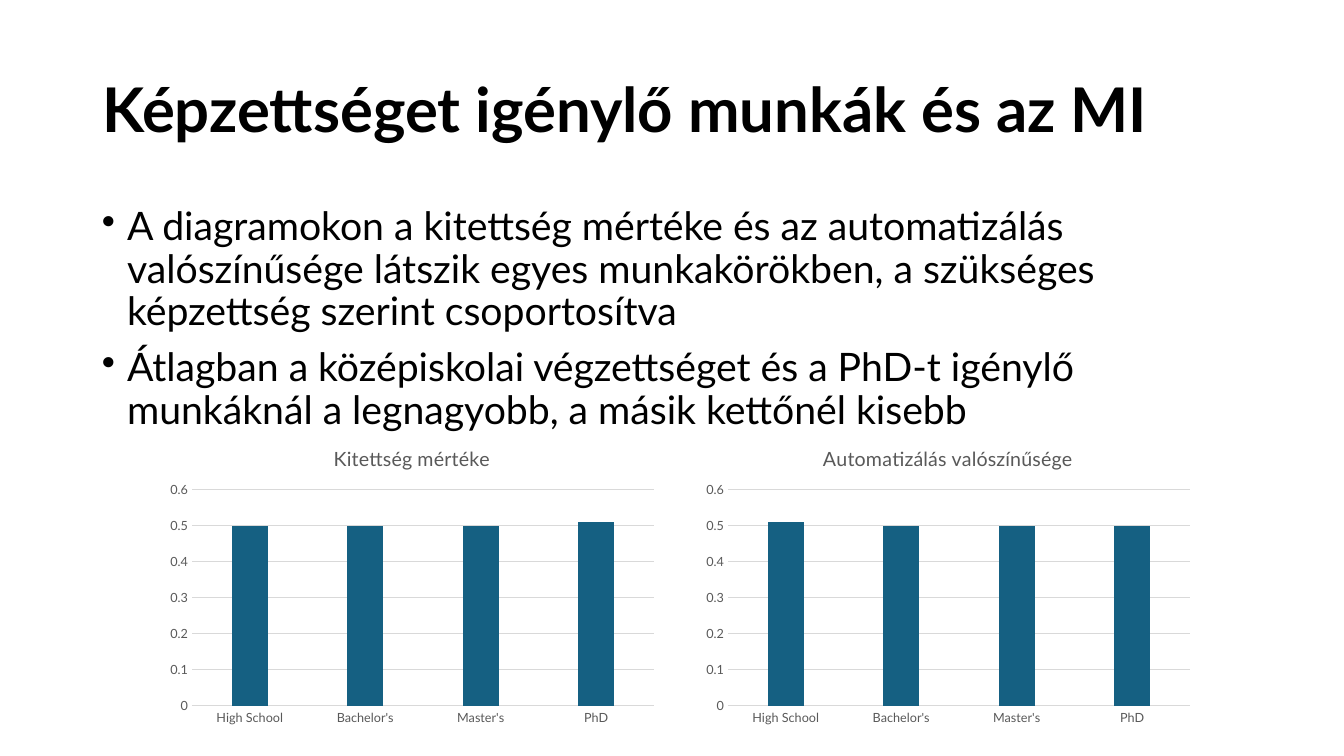
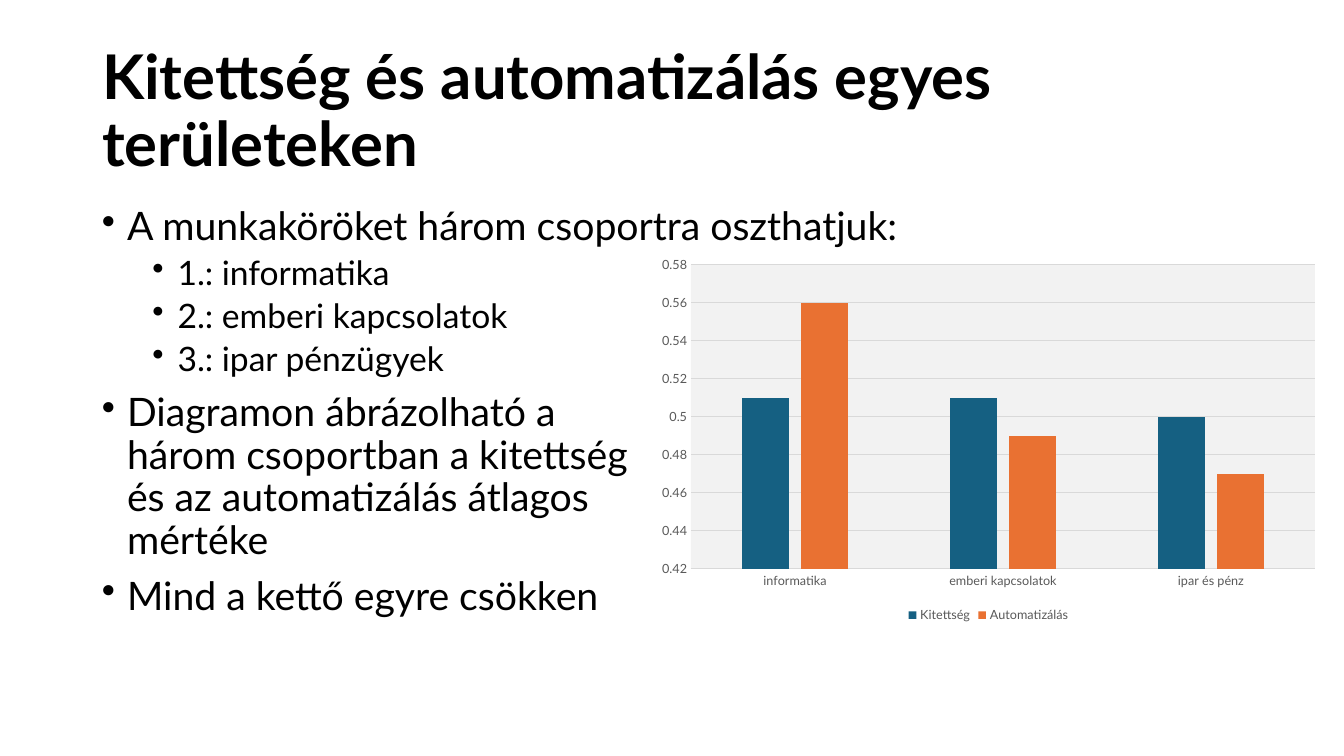
from dataclasses import dataclass
from typing import Any, Optional

from lxml.etree import Element, SubElement
from pptx import Presentation
from pptx.chart.chart import Chart
from pptx.chart.data import CategoryChartData
from pptx.dml.color import RGBColor
from pptx.enum.chart import XL_CHART_TYPE, XL_LEGEND_POSITION, XL_TICK_MARK
from pptx.enum.text import MSO_ANCHOR, MSO_AUTO_SIZE, PP_ALIGN
from pptx.oxml.ns import qn
from pptx.slide import Slide
from pptx.text.text import Font
from pptx.util import Emu, Pt

EMU_PER_PX = 914400 / 100.8


def px(length: int) -> Emu:
    return Emu(round(length * EMU_PER_PX))


@dataclass(frozen=True)
class Theme:
    font: str = "Lato"
    ink: str = "000000"
    muted: str = "595959"
    grid: str = "D9D9D9"
    plot_band: str = "F2F2F2"
    blue: str = "156082"
    orange: str = "E97132"
    title_size: int = 44
    body_sizes: tuple[int, int] = (28, 24)
    chart_title_size: int = 14
    chart_size: int = 10
    label_size: int = 9


THEME = Theme()


@dataclass(frozen=True)
class Box:
    left: int
    top: int
    width: int
    height: int

    def emu(self) -> tuple[Emu, Emu, Emu, Emu]:
        return px(self.left), px(self.top), px(self.width), px(self.height)


@dataclass(frozen=True)
class Bullet:
    text: str
    level: int = 0


@dataclass(frozen=True)
class Series:
    name: str
    values: tuple[float, ...]
    color: str = THEME.blue


@dataclass(frozen=True)
class Axis:
    low: float
    high: float
    step: float


@dataclass(frozen=True)
class ColumnChart:
    box: Box
    plot: Box  # relative to the chart box
    categories: tuple[str, ...]
    series: tuple[Series, ...]
    axis: Axis
    title: Optional[str] = None
    legend: bool = False
    plot_fill: Optional[str] = None


@dataclass(frozen=True)
class Page:
    title: str
    title_box: Box
    bullets: tuple[Bullet, ...]
    charts: tuple[ColumnChart, ...]


# Content
BODY_BOX = Box(92, 202, 1159, 480)
DEGREES = ("High School", "Bachelor's", "Master's", "PhD")


def degree_chart(left: int, title: str, values: tuple[float, ...]) -> ColumnChart:
    return ColumnChart(
        Box(left, 429, 504, 302), Box(32, 61, 462, 216), DEGREES,
        (Series("Series 1", values),), Axis(0, 0.6, 0.1), title=title,
    )


PAGES = (
    Page(
        "Képzettséget igénylő munkák és az MI",
        Box(92, 40, 1159, 146),
        (
            Bullet("A diagramokon a kitettség mértéke és az automatizálás valószínűsége "
                   "látszik egyes munkakörökben, a szükséges képzettség szerint csoportosítva"),
            Bullet("Átlagban a középiskolai végzettséget és a PhD-t igénylő munkáknál "
                   "a legnagyobb, a másik kettőnél kisebb"),
        ),
        (
            degree_chart(160, "Kitettség mértéke", (0.5, 0.5, 0.5, 0.51)),
            degree_chart(696, "Automatizálás valószínűsége", (0.51, 0.5, 0.5, 0.5)),
        ),
    ),
    Page(
        "Kitettség és automatizálás egyes területeken",
        Box(92, 40, 1190, 146),
        (
            Bullet("A munkaköröket három csoportra oszthatjuk:"),
            Bullet("1.: informatika", 1),
            Bullet("2.: emberi kapcsolatok", 1),
            Bullet("3.: ipar pénzügyek", 1),
            Bullet("Diagramon ábrázolható a\vhárom csoportban a kitettség\v"
                   "és az automatizálás átlagos\vmértéke"),
            Bullet("Mind a kettő egyre csökken"),
        ),
        (
            ColumnChart(
                Box(649, 249, 679, 378), Box(42, 16, 624, 304),
                ("informatika", "emberi kapcsolatok", "ipar és pénz"),
                (
                    Series("Kitettség", (0.51, 0.51, 0.5)),
                    Series("Automatizálás", (0.56, 0.49, 0.47), THEME.orange),
                ),
                Axis(0.42, 0.58, 0.02), legend=True, plot_fill=THEME.plot_band,
            ),
        ),
    ),
)


# Formatting
def apply(target: Any, formats: dict[str, Any]) -> None:
    for name, value in formats.items():
        setattr(target, name, value)


def style_font(font: Font, size: int, color: str, bold: bool = False) -> None:
    apply(font, {"name": THEME.font, "size": Pt(size), "bold": bold})
    font.color.rgb = RGBColor.from_string(color)


# Text
def fill_title(slide: Slide, page: Page) -> None:
    title = slide.shapes.title
    apply(title, dict(zip(("left", "top", "width", "height"), page.title_box.emu())))
    frame = title.text_frame
    frame.text = page.title
    apply(frame, {"word_wrap": True, "auto_size": MSO_AUTO_SIZE.NONE,
                  "vertical_anchor": MSO_ANCHOR.MIDDLE})
    paragraph = frame.paragraphs[0]
    apply(paragraph, {"alignment": PP_ALIGN.LEFT, "line_spacing": 0.9})
    style_font(paragraph.runs[0].font, THEME.title_size, THEME.ink, bold=True)


def add_bullets(slide: Slide, bullets: tuple[Bullet, ...]) -> None:
    frame = slide.shapes.add_textbox(*BODY_BOX.emu()).text_frame
    frame.word_wrap = True
    for index, bullet in enumerate(bullets):
        paragraph = frame.add_paragraph() if index else frame.paragraphs[0]
        properties = paragraph._p.get_or_add_pPr()
        properties.set("marL", str(Pt(18 + 36 * bullet.level)))
        properties.set("indent", str(-Pt(18)))
        SubElement(properties, qn("a:buChar")).set("char", "•")
        space = (10, 5)[bullet.level] if index else 0
        apply(paragraph, {"text": bullet.text, "level": bullet.level,
                          "line_spacing": 0.9, "space_before": Pt(space)})
        for run in paragraph.runs:
            style_font(run.font, THEME.body_sizes[bullet.level], THEME.ink)


# Charts
def place_plot(chart: Chart, spec: ColumnChart) -> None:
    area = chart.element.find(".//" + qn("c:plotArea"))
    for old_layout in area.findall(qn("c:layout")):
        area.remove(old_layout)
    layout = Element(qn("c:layout"))
    area.insert(0, layout)
    manual = SubElement(layout, qn("c:manualLayout"))
    settings = {
        "layoutTarget": "inner", "xMode": "edge", "yMode": "edge",
        "x": spec.plot.left / spec.box.width, "y": spec.plot.top / spec.box.height,
        "w": spec.plot.width / spec.box.width, "h": spec.plot.height / spec.box.height,
    }
    for name, value in settings.items():
        SubElement(manual, qn(f"c:{name}")).set("val", str(value))
    if spec.plot_fill:
        fill = SubElement(SubElement(area, qn("c:spPr")), qn("a:solidFill"))
        SubElement(fill, qn("a:srgbClr")).set("val", spec.plot_fill)


def style_axes(chart: Chart, limits: Axis) -> None:
    values, categories = chart.value_axis, chart.category_axis
    for axis in (values, categories):
        apply(axis, {"major_tick_mark": XL_TICK_MARK.NONE,
                     "minor_tick_mark": XL_TICK_MARK.NONE})
        style_font(axis.tick_labels.font, THEME.label_size, THEME.muted)
    apply(values, {"minimum_scale": limits.low, "maximum_scale": limits.high,
                   "major_unit": limits.step, "has_major_gridlines": True})
    values.format.line.fill.background()
    for line in (values.major_gridlines.format.line, categories.format.line):
        line.width = Pt(0.75)
        line.color.rgb = RGBColor.from_string(THEME.grid)


def add_column_chart(slide: Slide, spec: ColumnChart) -> None:
    data = CategoryChartData()
    data.categories = spec.categories
    for series in spec.series:
        data.add_series(series.name, series.values)
    chart = slide.shapes.add_chart(
        XL_CHART_TYPE.COLUMN_CLUSTERED, *spec.box.emu(), data).chart
    style_font(chart.font, THEME.chart_size, THEME.ink)
    apply(chart, {"has_title": bool(spec.title), "has_legend": spec.legend})

    if spec.title:
        frame = chart.chart_title.text_frame
        frame.text = spec.title
        style_font(frame.paragraphs[0].runs[0].font, THEME.chart_title_size, THEME.muted)
    if spec.legend:
        apply(chart.legend, {"position": XL_LEGEND_POSITION.BOTTOM,
                             "include_in_layout": False})
        style_font(chart.legend.font, THEME.label_size, THEME.muted)

    columns = chart.plots[0]
    apply(columns, {"gap_width": 219, "overlap": -27, "vary_by_categories": False})
    for drawn, series in zip(columns.series, spec.series):
        drawn.format.fill.solid()
        drawn.format.fill.fore_color.rgb = RGBColor.from_string(series.color)
    style_axes(chart, spec.axis)
    place_plot(chart, spec)


def main() -> None:
    deck = Presentation()
    apply(deck, {"slide_width": px(1344), "slide_height": px(756)})
    title_only = deck.slide_layouts.get_by_name("Title Only")
    for page in PAGES:
        slide = deck.slides.add_slide(title_only)
        fill_title(slide, page)
        add_bullets(slide, page.bullets)
        for chart in page.charts:
            add_column_chart(slide, chart)
    deck.save("out.pptx")


if __name__ == "__main__":
    main()
